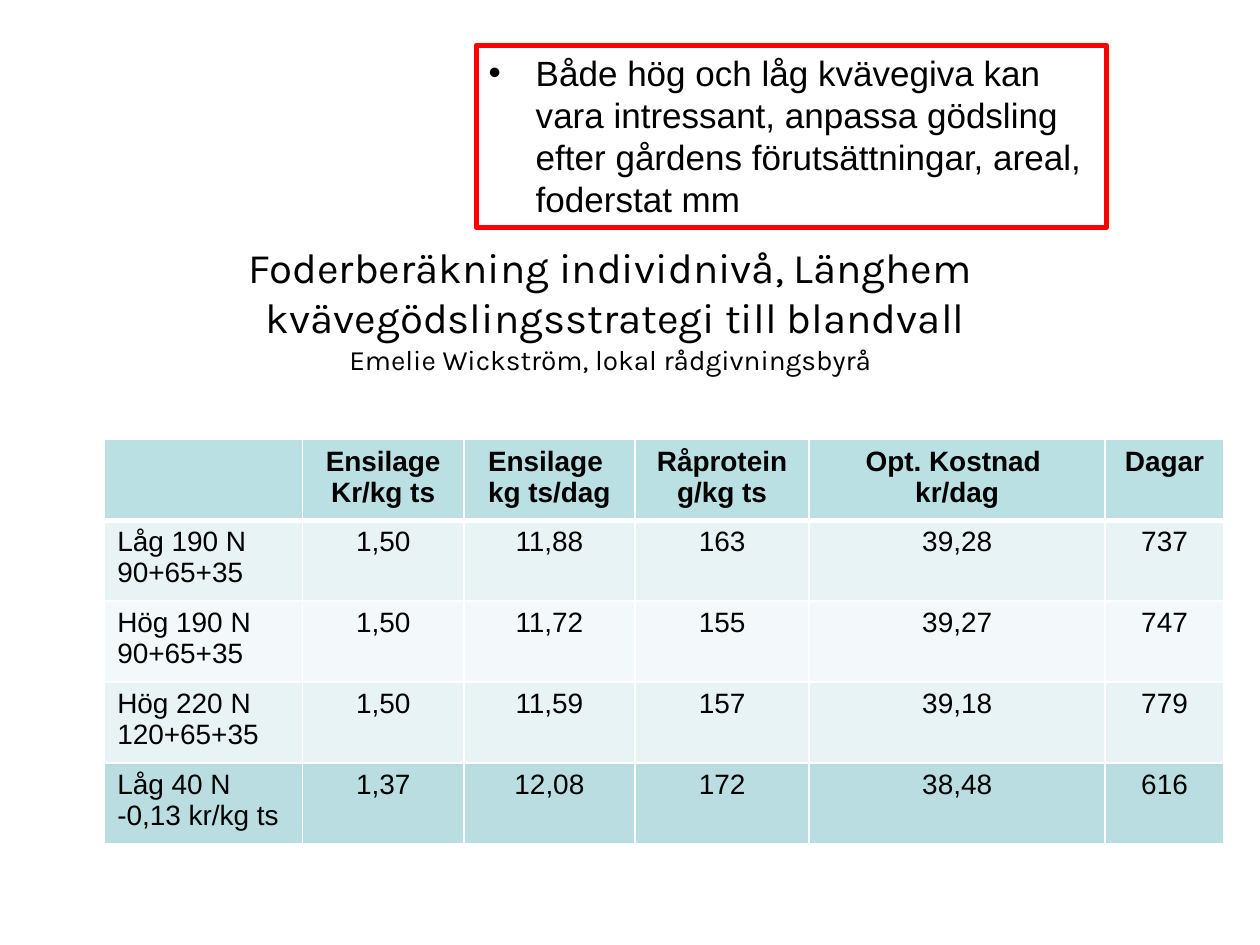
from pptx import Presentation
from pptx.dml.color import RGBColor
from pptx.enum.text import MSO_ANCHOR, MSO_AUTO_SIZE, PP_ALIGN
from pptx.oxml.xmlchemy import OxmlElement
from pptx.util import Cm, Pt

LEFT, CENTER = PP_ALIGN.LEFT, PP_ALIGN.CENTER
TOP, BOTTOM = MSO_ANCHOR.TOP, MSO_ANCHOR.BOTTOM
NO_AUTOFIT = MSO_AUTO_SIZE.NONE
TITLE_AND_CONTENT = 1

COLORS = {
    "text": "000000",
    "frame": "FF0000",
    "grid": "FFFFFF",
    "header": "BBE0E3",
    "odd": "E7F3F4",
    "even": "F3F9FA",
    "highlight": "BADDE1",
}

TITLE_LINES = [
    ("Foderberäkning individnivå, Länghem", 24),
    (" kvävegödslingsstrategi till blandvall", 24),
    ("Emelie Wickström, lokal rådgivningsbyrå", 16),
]
CONCLUSION = (
    "Både hög och låg kvävegiva kan vara intressant, anpassa gödsling "
    "efter gårdens förutsättningar, areal, foderstat mm"
)
COLUMN_WIDTHS = [3.99, 3.25, 3.45, 3.51, 5.97, 2.39]
ROW_HEIGHT = 1.63
FEED_ROWS = [
    ("header", ["", "Ensilage\nKr/kg ts", "Ensilage \nkg ts/dag",
                "Råprotein g/kg ts", "Opt. Kostnad \nkr/dag", "Dagar"]),
    ("odd", ["Låg 190 N\n90+65+35", "1,50", "11,88", "163", "39,28", "737"]),
    ("even", ["Hög 190 N\n90+65+35", "1,50", "11,72", "155", "39,27", "747"]),
    ("odd", ["Hög 220 N\n120+65+35", "1,50", "11,59", "157", "39,18", "779"]),
    ("highlight", ["Låg 40 N\n-0,13 kr/kg ts", "1,37", "12,08", "172", "38,48", "616"]),
]


def color(name):
    return RGBColor.from_string(COLORS[name])


class FeedSlide:
    title_font = "Karla"
    body_font = "Arial"

    def __init__(self, presentation):
        layout = presentation.slide_layouts[TITLE_AND_CONTENT]
        self.slide = presentation.slides.add_slide(layout)

    def style(self, run, font, size, bold=False):
        run.font.name = font
        run.font.size = Pt(size)
        run.font.bold = bold
        run.font.color.rgb = color("text")

    def place(self, placeholder, left, top, width, height, insets, anchor):
        placeholder.left, placeholder.top = Cm(left), Cm(top)
        placeholder.width, placeholder.height = Cm(width), Cm(height)
        frame = placeholder.text_frame
        frame.auto_size = NO_AUTOFIT
        frame.word_wrap = True
        frame.vertical_anchor = anchor
        (frame.margin_left, frame.margin_top,
         frame.margin_right, frame.margin_bottom) = [Cm(inset) for inset in insets]
        return frame

    def title(self, lines, box):
        frame = self.place(self.slide.shapes.title, *box, (0.1, 0.1, 0.1, 0.76), BOTTOM)
        paragraph = frame.paragraphs[0]
        paragraph.text = "\v".join(line for line, size in lines)
        paragraph.alignment = CENTER
        for run, (line, size) in zip(paragraph.runs, lines):
            self.style(run, self.title_font, size)

    def framed_bullet(self, text, box):
        body = self.slide.placeholders[1]
        frame = self.place(body, *box, (0.25, 0.13, 0.25, 0.13), TOP)
        body.line.color.rgb = color("frame")
        body.line.width = Pt(2.75)
        frame.text = text
        paragraph = frame.paragraphs[0]
        properties = paragraph._p.get_or_add_pPr()
        properties.set("marL", str(Cm(0.95)))
        properties.set("indent", str(-Cm(0.95)))
        bullet = OxmlElement("a:buChar")
        bullet.set("char", "•")
        properties.append(bullet)
        paragraph.alignment = LEFT
        paragraph.space_before = Pt(0)
        self.style(paragraph.runs[0], self.body_font, 20)

    def border(self, cell, side, width):
        line = OxmlElement(f"a:ln{side}")
        line.set("w", str(Pt(width)))
        fill = OxmlElement("a:solidFill")
        shade = OxmlElement("a:srgbClr")
        shade.set("val", COLORS["grid"])
        fill.append(shade)
        line.append(fill)
        cell._tc.get_or_add_tcPr().append(line)

    def table(self, rows, widths, left, top):
        table = self.slide.shapes.add_table(
            len(rows), len(widths), Cm(left), Cm(top),
            Cm(sum(widths)), Cm(ROW_HEIGHT * len(rows))).table
        for column, width in zip(table.columns, widths):
            column.width = Cm(width)
        for row_index, (fill, texts) in enumerate(rows):
            table.rows[row_index].height = Cm(ROW_HEIGHT)
            for column_index, text in enumerate(texts):
                cell = table.cell(row_index, column_index)
                self.fill_cell(cell, text, fill, row_index, column_index)

    def fill_cell(self, cell, text, fill, row_index, column_index):
        thick_sides = {0: "B", 1: "T"}
        for side in "LRTB":
            self.border(cell, side, 3 if thick_sides.get(row_index) == side else 1)
        cell.fill.solid()
        cell.fill.fore_color.rgb = color(fill)
        cell.text_frame.text = text
        for paragraph in cell.text_frame.paragraphs:
            paragraph.alignment = CENTER if column_index else LEFT
            for run in paragraph.runs:
                self.style(run, self.body_font, 16, bold=row_index == 0)


def main():
    presentation = Presentation()
    presentation.slide_width, presentation.slide_height = Cm(25.4), Cm(19.05)
    slide = FeedSlide(presentation)
    slide.title(TITLE_LINES, (0.71, 5.16, 23.19, 3.18))
    slide.table(FEED_ROWS, COLUMN_WIDTHS, 2.11, 8.86)
    slide.framed_bullet(CONCLUSION, (9.6, 0.91, 12.7, 3.68))
    presentation.save("out.pptx")


if __name__ == "__main__":
    main()
